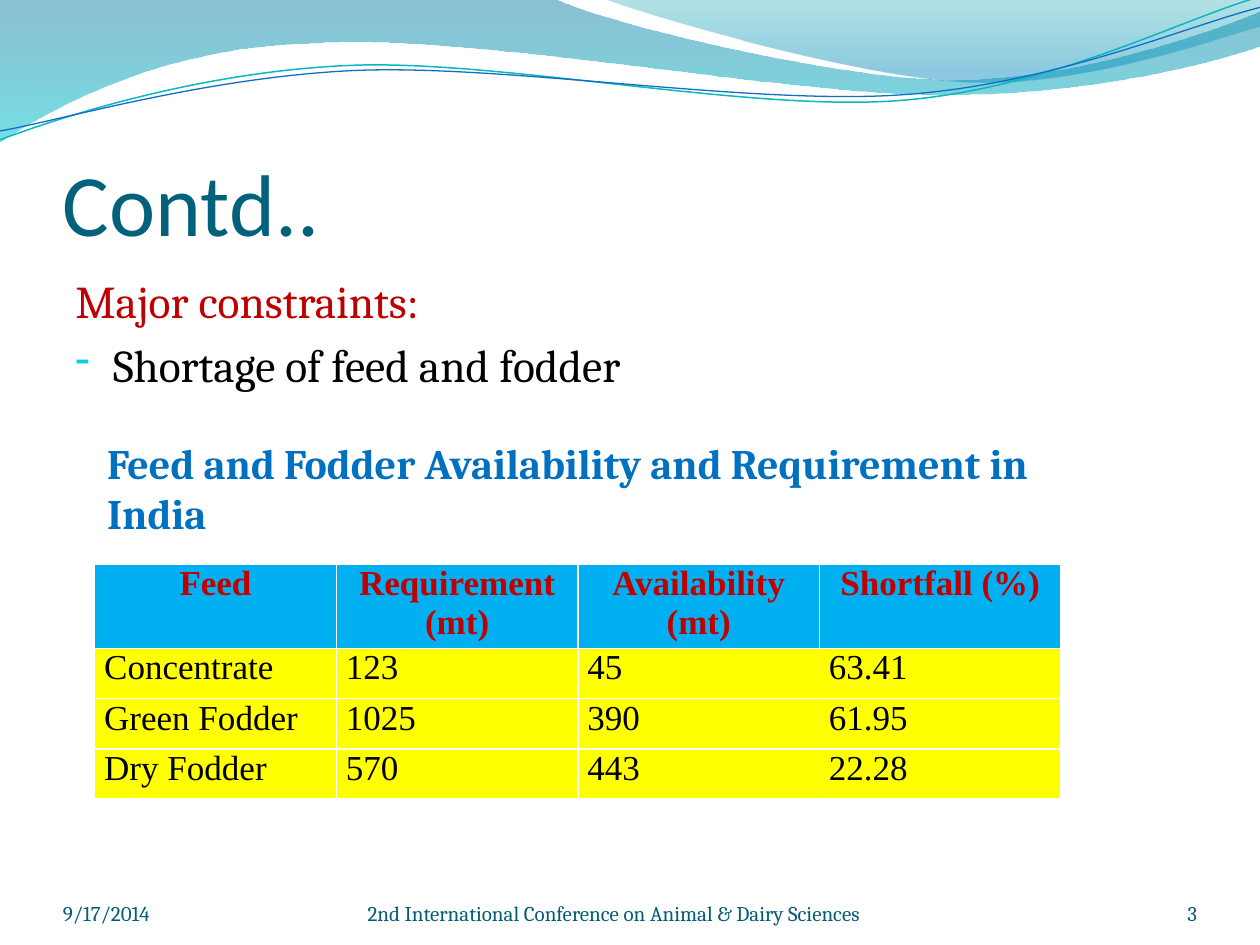
"""Build the slide on feed and fodder constraints with its wave header."""
from lxml import etree
from pptx import Presentation
from pptx.dml.color import RGBColor
from pptx.enum.text import MSO_ANCHOR, PP_ALIGN
from pptx.oxml.ns import qn
from pptx.util import Cm, Pt

TOP, BOTTOM = MSO_ANCHOR.TOP, MSO_ANCHOR.BOTTOM
LEFT, CENTER, RIGHT, JUSTIFY = PP_ALIGN.LEFT, PP_ALIGN.CENTER, PP_ALIGN.RIGHT, PP_ALIGN.JUSTIFY

BLACK = RGBColor(0x00, 0x00, 0x00)
RED = RGBColor(0xC0, 0x00, 0x00)
TITLE_TEAL = RGBColor(0x04, 0x61, 0x7B)
FOOTER_TEAL = RGBColor(0x04, 0x5D, 0x75)
CAPTION_BLUE = RGBColor(0x00, 0x70, 0xC0)
HEADER_BLUE = RGBColor(0x00, 0xB0, 0xF0)
YELLOW = RGBColor(0xFF, 0xFF, 0x00)
BULLET_CYAN = RGBColor(0x0B, 0xD0, 0xD9)
DEEP_BLUE = RGBColor(0x00, 0x74, 0xA1)
AQUA = RGBColor(0x00, 0xC6, 0xCF)
SEA_GREEN = RGBColor(0x00, 0xA1, 0xA9)
SKY_BLUE = RGBColor(0x00, 0x8B, 0xBF)
LINE_TEAL = RGBColor(0x0A, 0xB8, 0xBF)
LINE_BLUE = RGBColor(0x0F, 0x6F, 0xC6)

TITLE_FONT = {"name": "Calibri", "size": Pt(50)}
BODY_FONT = {"name": "Cambria", "size": Pt(26)}
CAPTION_FONT = {"name": "Cambria", "size": Pt(24), "bold": True}
FOOTER_FONT = {"name": "Cambria", "size": Pt(12)}
HEADER_FONT = {"name": "Times New Roman", "size": Pt(20), "bold": True}
CELL_FONT = {"name": "Times New Roman", "size": Pt(20), "bold": False}


def write(paragraph, text, font_format, color, alignment=LEFT):
    paragraph.alignment = alignment
    run = paragraph.add_run()
    run.text = text
    for attribute, value in font_format.items():
        setattr(run.font, attribute, value)
    run.font.color.rgb = color


def add_wave(shapes, start, segments, close):
    builder = shapes.build_freeform(Cm(start[0]), Cm(start[1]))
    for segment in segments:
        points = [(Cm(x), Cm(y)) for x, y in zip(segment[::2], segment[1::2])]
        builder.add_line_segments(points, close=False)
    if close:
        builder.add_line_segments([], close=True)
    wave = builder.convert_to_shape()
    wave.shadow.inherit = False
    steps = iter(list(wave.element.iter(qn("a:lnTo"))))
    for segment in segments:
        first = next(steps)
        if len(segment) == 6:
            first.tag = qn("a:cubicBezTo")
            for _ in range(2):
                control = next(steps)
                first.append(control[0])
                control.getparent().remove(control)
    return wave


presentation = Presentation()
presentation.slide_width = Cm(25.4)
presentation.slide_height = Cm(19.05)
slide = presentation.slides.add_slide(presentation.slide_layouts[6])

bands = [
    ((0, 0),
     [(11.18, -0.03), (12.09, 0.43, 16.87, 1.6, 19.25, 1.6),
      (21.67, 1.6, 24.33, 0.66, 25.4, 0.23), (25.43, 0.91),
      (24.97, 1.12, 22.1, 1.93, 18.95, 1.91), (15.8, 1.91, 9.7, 0.71, 6.53, 0.86),
      (3.28, 0.91, 1.17, 2.11, -0.03, 2.87), (0, 0)],
     [(0, DEEP_BLUE, 45), (1, AQUA, 55)]),
    ((12.17, -0.03),
     [(12.93, 0.28, 17.32, 1.57, 19.53, 1.65), (21.74, 1.75, 24.41, 0.81, 25.4, 0.53),
      (25.4, 0), (12.17, -0.03)],
     [(0, SEA_GREEN, 30), (0.8, SKY_BLUE, 45)]),
]
for start, segments, stops in bands:
    band = add_wave(slide.shapes, start, segments, True)
    band.line.fill.background()
    band.fill.gradient()
    band.fill.gradient_angle = 270
    for stop, (position, color, opacity) in zip(band.fill.gradient_stops, stops):
        stop.position = position
        stop.color.rgb = color
    for tint, (position, color, opacity) in zip(band.element.iter(qn("a:srgbClr")), stops):
        etree.SubElement(tint, qn("a:alpha"), val=str(opacity * 1000))

strands = [
    ((0, 2.82),
     [(1.22, 2.36, 4.01, 1.45, 7.04, 1.32), (10.03, 1.19, 15.06, 2.26, 18.11, 2.03),
      (21.16, 1.8, 23.83, 0.38, 25.35, -0.05)],
     LINE_TEAL, 0.85),
    ((0, 2.64),
     [(1.19, 2.44, 4.17, 1.55, 7.19, 1.42), (10.24, 1.3, 15.16, 2.13, 18.21, 1.91),
      (21.23, 1.7, 23.9, 0.53, 25.4, 0.15)],
     LINE_BLUE, 0.75),
]
for start, segments, color, width in strands:
    strand = add_wave(slide.shapes, start, segments, False)
    strand.fill.background()
    strand.line.color.rgb = color
    strand.line.width = Pt(width)

FLUSH, TITLE_INSET, PADDED = (0, 0, 0, 0), (0, 0.13, 0, 0), (0.25, 0.13, 0.25, 0.13)
texts = [
    ((1.27, 1.94, 22.86, 3.18), TITLE_INSET, BOTTOM, LEFT, TITLE_FONT, [("Contd..", TITLE_TEAL)]),
    ((1.27, 5.38, 22.86, 12.19), PADDED, TOP, LEFT, BODY_FONT,
     [("Major constraints:", RED), ("Shortage of feed and fodder", BLACK)]),
    ((1.91, 8.69, 19.48, 2.31), PADDED, TOP, LEFT, CAPTION_FONT,
     [("Feed and Fodder Availability and Requirement in India", CAPTION_BLUE)]),
    ((1.27, 17.65, 5.92, 1.02), FLUSH, BOTTOM, LEFT, FOOTER_FONT, [("9/17/2014", FOOTER_TEAL)]),
    ((7.41, 17.65, 11.23, 1.02), FLUSH, BOTTOM, LEFT, FOOTER_FONT,
     [("2nd International Conference on Animal & Dairy Sciences", FOOTER_TEAL)]),
    ((22.02, 17.65, 2.11, 1.02), FLUSH, BOTTOM, RIGHT, FOOTER_FONT, [("3", FOOTER_TEAL)]),
]
for place, insets, anchor, alignment, font_format, lines in texts:
    frame = slide.shapes.add_textbox(*map(Cm, place)).text_frame
    frame.word_wrap = True
    frame.vertical_anchor = anchor
    for side, inset in zip(("left", "top", "right", "bottom"), insets):
        setattr(frame, f"margin_{side}", Cm(inset))
    for index, (text, color) in enumerate(lines):
        paragraph = frame.add_paragraph() if index else frame.paragraphs[0]
        if index:
            properties = paragraph._p.get_or_add_pPr()
            properties.set("marL", str(Cm(0.76)))
            properties.set("indent", str(-Cm(0.76)))
            bullet_color = etree.SubElement(properties, qn("a:buClr"))
            etree.SubElement(bullet_color, qn("a:srgbClr"), val=str(BULLET_CYAN))
            etree.SubElement(properties, qn("a:buSzPct"), val="95000")
            etree.SubElement(properties, qn("a:buFontTx"))
            etree.SubElement(properties, qn("a:buChar"), char="-")
            paragraph.space_before = Pt(5.2)
        write(paragraph, text, font_format, color, alignment)

feed_rows = [
    ("Feed", "Requirement (mt)", "Availability (mt)", "Shortfall (%)"),
    ("Concentrate", "123", "45", "63.41"),
    ("Green Fodder", "1025", "390", "61.95"),
    ("Dry Fodder", "570", "443", "22.28"),
]
cell_margins = {"margin_left": Cm(0.19), "margin_right": Cm(0.19), "margin_top": 0, "margin_bottom": 0}
feed_table = slide.shapes.add_table(4, 4, Cm(1.91), Cm(11.38), Cm(19.48), Cm(4.04)).table
for row_index, values in enumerate(feed_rows):
    feed_table.rows[row_index].height = Cm(1.01)
    is_header = row_index == 0
    for column_index, value in enumerate(values):
        cell = feed_table.cell(row_index, column_index)
        for attribute, margin in cell_margins.items():
            setattr(cell, attribute, margin)
        cell.fill.solid()
        cell.fill.fore_color.rgb = HEADER_BLUE if is_header else YELLOW
        write(cell.text_frame.paragraphs[0], value, HEADER_FONT if is_header else CELL_FONT,
              RED if is_header else BLACK, CENTER if is_header else JUSTIFY)

presentation.save("out.pptx")
